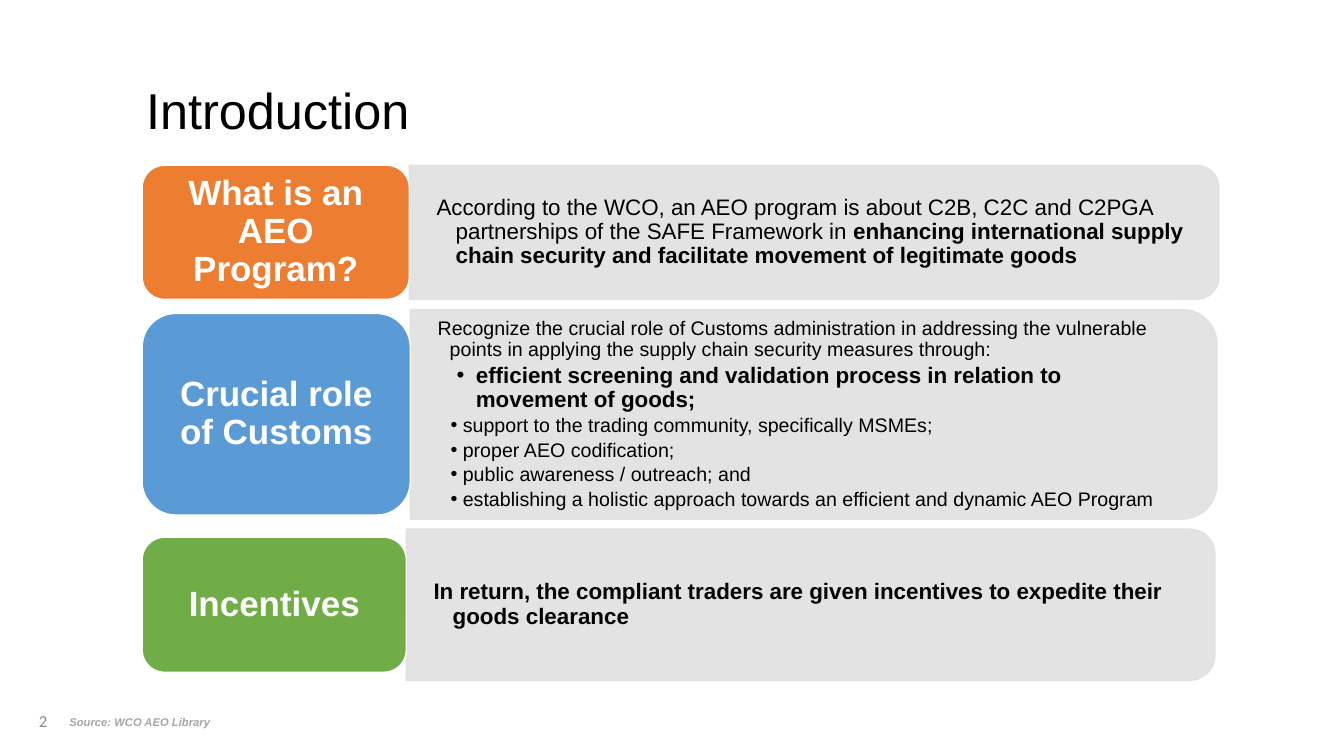
from dataclasses import dataclass

from lxml.etree import SubElement
from pptx import Presentation
from pptx.dml.color import RGBColor
from pptx.enum.shapes import MSO_SHAPE
from pptx.enum.text import MSO_ANCHOR, MSO_AUTO_SIZE, PP_ALIGN
from pptx.oxml.ns import qn
from pptx.util import Pt

PX = 9144


@dataclass(frozen=True)
class Theme:
    font: str = "Arial"
    number_font: str = "Calibri"
    ink: str = "000000"
    white: str = "FFFFFF"
    panel: str = "E1E1E1"
    number: str = "8C8C8C"
    source: str = "A6A6A6"
    orange: str = "ED7D31"
    blue: str = "5B9BD5"
    green: str = "70AD47"
    title_size: int = 36
    heading_size: int = 25
    text_size: int = 16
    list_size: int = 14
    number_size: int = 12
    source_size: int = 8


@dataclass(frozen=True)
class Para:
    runs: tuple
    size: int
    left: int
    hang: int
    bullet: bool = False


class Deck:
    def __init__(self, prs, theme):
        self.theme = theme
        self.slide = prs.slides.add_slide(prs.slide_layouts[1])
        self.shapes = self.slide.shapes

    def place(self, sp, left, top, width, height):
        sp.left, sp.top = left * PX, top * PX
        sp.width, sp.height = width * PX, height * PX

    def frame(self, sp, inset_x=10, inset_y=5):
        tf = sp.text_frame
        tf.word_wrap = True
        tf.auto_size = MSO_AUTO_SIZE.NONE
        tf.vertical_anchor = MSO_ANCHOR.MIDDLE
        tf.margin_left = tf.margin_right = inset_x * PX
        tf.margin_top = tf.margin_bottom = inset_y * PX
        return tf

    def format(self, r, size, color, bold=False, italic=False, font=None):
        r.font.name = font or self.theme.font
        r.font.size = Pt(size)
        r.font.bold = bold
        r.font.italic = italic
        r.font.color.rgb = RGBColor.from_string(color)

    def line(self, tf, text, align, size, color, spacing=1.0, **style):
        tf.text = text
        p = tf.paragraphs[0]
        p.alignment = align
        p.line_spacing = spacing
        self.format(p.runs[0], size, color, **style)

    def title(self, text, *box):
        sp = self.shapes.title
        self.place(sp, *box)
        self.line(self.frame(sp), text, PP_ALIGN.LEFT,
                  self.theme.title_size, self.theme.ink, 0.9)

    def label(self, text, box, align, size, color, **style):
        sp = self.shapes.add_textbox(*(v * PX for v in box))
        self.line(self.frame(sp), text, align, size, color, **style)

    def panel(self, left, top, width, height):
        sp = self.shapes.add_shape(MSO_SHAPE.ROUND_2_SAME_RECTANGLE, 0, 0, 0, 0)
        shift = (width - height) // 2
        self.place(sp, left + shift, top - shift, height, width)
        sp.rotation = 90
        sp.shadow.inherit = False
        color = RGBColor.from_string(self.theme.panel)
        sp.fill.solid()
        sp.fill.fore_color.rgb = color
        sp.line.color.rgb = color
        sp.line.width = Pt(1)
        for clr in sp._element.spPr.iter(qn("a:srgbClr")):
            SubElement(clr, qn("a:alpha"), val="90000")

    def heading(self, text, color, *box):
        sp = self.shapes.add_shape(MSO_SHAPE.ROUNDED_RECTANGLE, *(v * PX for v in box))
        sp.shadow.inherit = False
        sp.fill.solid()
        sp.fill.fore_color.rgb = RGBColor.from_string(color)
        sp.line.color.rgb = RGBColor.from_string(self.theme.white)
        sp.line.width = Pt(1)
        self.line(self.frame(sp), text, PP_ALIGN.CENTER,
                  self.theme.heading_size, self.theme.white, 0.9, bold=True)

    def body(self, paras, *box):
        if len(paras) > 1:
            sp = self.slide.placeholders[1]
            self.shapes._spTree.append(sp._element)
        else:
            sp = self.shapes.add_textbox(0, 0, 0, 0)
        self.place(sp, *box)
        tf = self.frame(sp, 27, 14)
        for i, para in enumerate(paras):
            p = tf.add_paragraph() if i else tf.paragraphs[0]
            self.paragraph(p, para)

    def paragraph(self, p, para):
        p.level = 2 if para.bullet else 1
        pPr = p._p.get_or_add_pPr()
        pPr.set("marL", str(para.left * PX))
        pPr.set("indent", str(-para.hang * PX))
        if para.bullet:
            SubElement(pPr, qn("a:buChar"), char="•")
        else:
            SubElement(pPr, qn("a:buNone"))
        p.alignment = PP_ALIGN.LEFT
        p.line_spacing = 0.9
        p.space_before = Pt(0)
        p.space_after = Pt(2.4)
        for text, bold in para.runs:
            r = p.add_run()
            r.text = text
            self.format(r, para.size, self.theme.ink, bold)


def main():
    theme = Theme()
    prs = Presentation()
    prs.slide_width, prs.slide_height = 1333 * PX, 750 * PX
    deck = Deck(prs, theme)

    definition = [Para((
        ("According to the WCO, an AEO program is about C2B, C2C and C2PGA "
         "partnerships of the SAFE Framework in ", False),
        ("enhancing international supply chain security and facilitate "
         "movement of legitimate goods", True),
    ), theme.text_size, 19, 19)]
    customs = [
        Para((("Recognize the crucial role of Customs administration in addressing "
               "the vulnerable points in applying the supply chain security "
               "measures through:", False),), theme.list_size, 12, 12),
        Para((("efficient screening and validation process in relation to "
               "movement of goods;", True),), theme.text_size, 38, 19, True),
    ] + [
        Para(((text, False),), theme.list_size, 25, 12, True)
        for text in (
            "support to the trading community, specifically MSMEs;",
            "proper AEO codification;",
            "public awareness / outreach; and",
            "establishing a holistic approach towards an efficient and dynamic AEO Program",
        )
    ]
    incentives = [Para((
        ("In return, the compliant traders are given incentives to expedite "
         "their goods clearance", True),
    ), theme.text_size, 19, 19)]

    left = 141
    rows = [
        ("What is an AEO Program?", theme.orange, 265, 164, 133, 803, 133, 796, definition),
        ("Crucial role of Customs", theme.blue, 266, 311, 200, 800, 208, 790, customs),
        ("Incentives", theme.green, 262, 533, 134, 802, 150, 795, incentives),
    ]

    deck.title("Introduction", 135, 40, 981, 145)
    deck.label("2", (7, 695, 50, 40), PP_ALIGN.RIGHT, theme.number_size,
               theme.number, font=theme.number_font)
    deck.label("Source: WCO AEO Library", (59, 704, 216, 24), PP_ALIGN.LEFT,
               theme.source_size, theme.source, bold=True, italic=True)
    for text, color, width, top, height, panel_w, panel_h, body_w, paras in rows:
        panel_top = top + (height - panel_h) // 2
        deck.panel(left + width, panel_top, panel_w, panel_h)
        deck.body(paras, left + width, panel_top, body_w, panel_h)
        deck.heading(text, color, left, top, width, height)

    prs.save("out.pptx")


if __name__ == "__main__":
    main()
